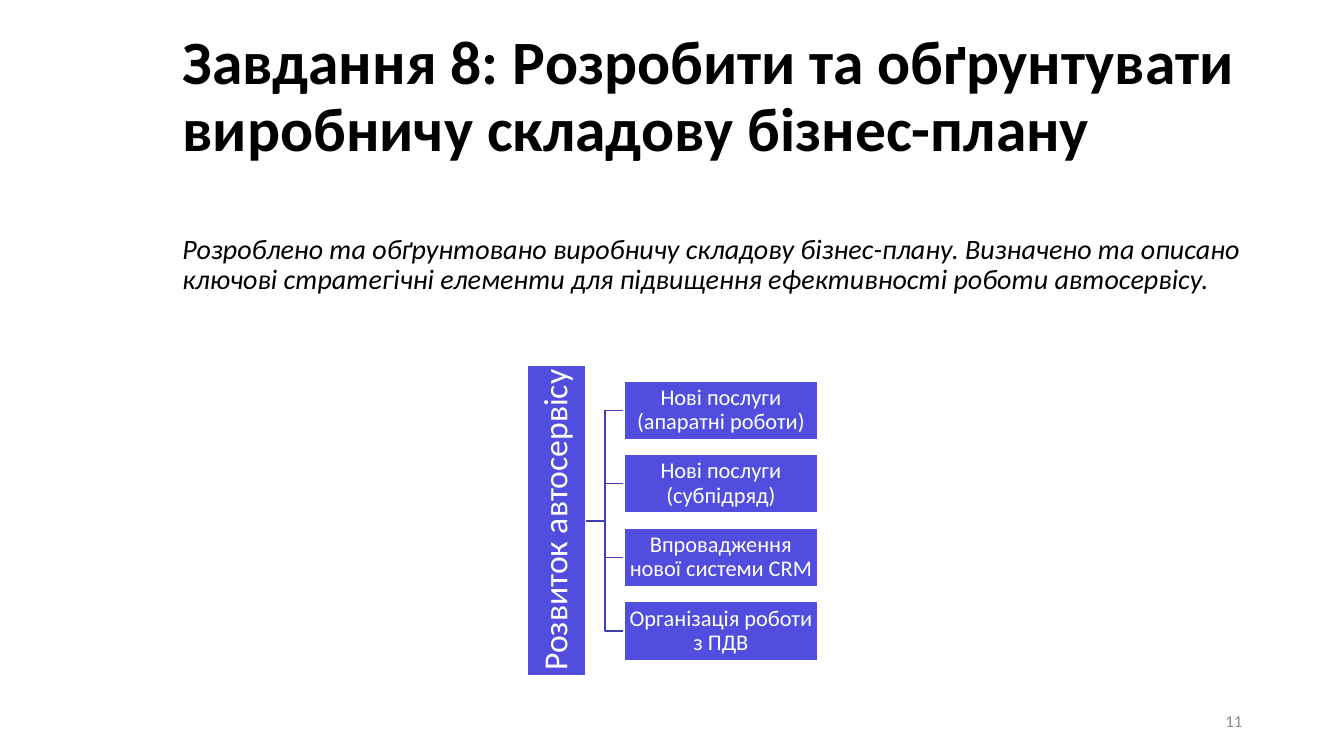
from dataclasses import dataclass

from lxml import etree
from pptx import Presentation
from pptx.dml.color import RGBColor
from pptx.enum import shapes, text
from pptx.oxml.ns import qn
from pptx.util import Inches, Pt


@dataclass(frozen=True)
class Theme:
    font: str = "Calibri"
    ink: RGBColor = RGBColor(0x00, 0x00, 0x00)
    paper: RGBColor = RGBColor(0xFF, 0xFF, 0xFF)
    box: RGBColor = RGBColor(0x51, 0x4D, 0xDF)
    branch: RGBColor = RGBColor(0x41, 0x3E, 0xB3)
    muted: RGBColor = RGBColor(0x8C, 0x8C, 0x8C)
    title_size: int = 44
    body_size: int = 20
    root_size: int = 24
    leaf_size: int = 16
    number_size: int = 12


@dataclass(frozen=True)
class Box:
    """A diagram box, lengths in inches."""
    label: str
    left: float
    top: float
    width: float
    height: float
    size: int
    inset: float
    rotation: int = 0


THEME = Theme()
BOX_HEIGHT = 0.58
LEAF_LEFT, LEAF_TOP, LEAF_WIDTH, LEAF_PITCH = 6.19, 3.78, 1.92, 0.73
ROOT_RIGHT, ROOT_MIDDLE = 5.81, 5.17
DIRECTIONS = [
    "Нові послуги (апаратні роботи)",
    "Нові послуги (субпідряд)",
    "Впровадження нової системи CRM",
    "Організація роботи з ПДВ",
]


def place(shape, left: float, top: float, width: float, height: float) -> None:
    shape.left, shape.top = Inches(left), Inches(top)
    shape.width, shape.height = Inches(width), Inches(height)


def write(frame, content: str, size: int, color: RGBColor, align, anchor,
          spacing: float = 0.9):
    """Fill a text frame with one formatted paragraph and return it."""
    frame.text = content
    frame.word_wrap = True
    frame.auto_size = text.MSO_AUTO_SIZE.NONE
    frame.vertical_anchor = anchor
    paragraph = frame.paragraphs[0]
    paragraph.alignment = align
    paragraph.line_spacing = spacing
    paragraph.space_before = Pt(0)
    paragraph.font.name = THEME.font
    paragraph.font.size = Pt(size)
    paragraph.font.color.rgb = color
    return paragraph


def draw_box(slide, box: Box) -> None:
    shape = slide.shapes.add_shape(
        shapes.MSO_SHAPE.RECTANGLE, Inches(box.left), Inches(box.top),
        Inches(box.width), Inches(box.height))
    shape.rotation = box.rotation
    shape.shadow.inherit = False
    shape.fill.solid()
    shape.fill.fore_color.rgb = THEME.box
    shape.line.color.rgb = THEME.paper
    shape.line.width = Pt(1)
    frame = shape.text_frame
    frame.margin_left = frame.margin_right = Inches(box.inset)
    frame.margin_top = frame.margin_bottom = Inches(box.inset)
    write(frame, box.label, box.size, THEME.paper,
          text.PP_ALIGN.CENTER, text.MSO_ANCHOR.MIDDLE)


def draw_branch(slide, leaf: Box) -> None:
    """Draw the stepped line from the root box to a leaf box."""
    bend = (ROOT_RIGHT + leaf.left) / 2
    leaf_middle = leaf.top + leaf.height / 2
    builder = slide.shapes.build_freeform(Inches(ROOT_RIGHT), Inches(ROOT_MIDDLE))
    steps = [(bend, ROOT_MIDDLE), (bend, leaf_middle), (leaf.left, leaf_middle)]
    builder.add_line_segments([(Inches(x), Inches(y)) for x, y in steps], close=False)
    branch = builder.convert_to_shape()
    branch.shadow.inherit = False
    branch.fill.background()
    branch.line.color.rgb = THEME.branch
    branch.line.width = Pt(1)


def main() -> None:
    deck = Presentation()
    deck.slide_width, deck.slide_height = Inches(13.33), Inches(7.5)
    slide = deck.slides.add_slide(deck.slide_layouts[1])

    # Title
    title = slide.shapes.title
    place(title, 1.71, 0.15, 11.5, 1.65)
    heading = write(
        title.text_frame,
        "Завдання 8: Розробити та обґрунтувати виробничу складову бізнес-плану",
        THEME.title_size, THEME.ink, text.PP_ALIGN.LEFT, text.MSO_ANCHOR.MIDDLE)
    heading.font.bold = True

    # Summary, without a bullet
    summary = slide.placeholders[1]
    place(summary, 1.71, 2.28, 11.5, 4.22)
    result = write(
        summary.text_frame,
        "Розроблено та обґрунтовано виробничу складову бізнес-плану. "
        "Визначено та описано ключові стратегічні елементи для підвищення "
        "ефективності роботи автосервісу.",
        THEME.body_size, THEME.ink, text.PP_ALIGN.LEFT, text.MSO_ANCHOR.TOP)
    properties = result._p.get_or_add_pPr()
    properties.set("marL", "0")
    properties.set("indent", "0")
    no_bullet = etree.Element(qn("a:buNone"))
    properties.find(qn("a:defRPr")).addprevious(no_bullet)
    result.font.italic = True

    # Development tree: branches lie behind the boxes
    leaves = [
        Box(label, LEAF_LEFT, LEAF_TOP + row * LEAF_PITCH, LEAF_WIDTH, BOX_HEIGHT,
            THEME.leaf_size, 0.01)
        for row, label in enumerate(DIRECTIONS)
    ]
    root = Box("Розвиток автосервісу", 3.98, 4.87, 3.08, BOX_HEIGHT,
               THEME.root_size, 0.02, rotation=270)
    for leaf in reversed(leaves):
        draw_branch(slide, leaf)
    for box in [root, *leaves]:
        draw_box(slide, box)

    # Slide number
    number = slide.shapes.add_textbox(Inches(9.42), Inches(6.95), Inches(3), Inches(0.4))
    write(number.text_frame, "11", THEME.number_size, THEME.muted,
          text.PP_ALIGN.RIGHT, text.MSO_ANCHOR.MIDDLE, spacing=1.0)

    deck.save("out.pptx")


if __name__ == "__main__":
    main()
